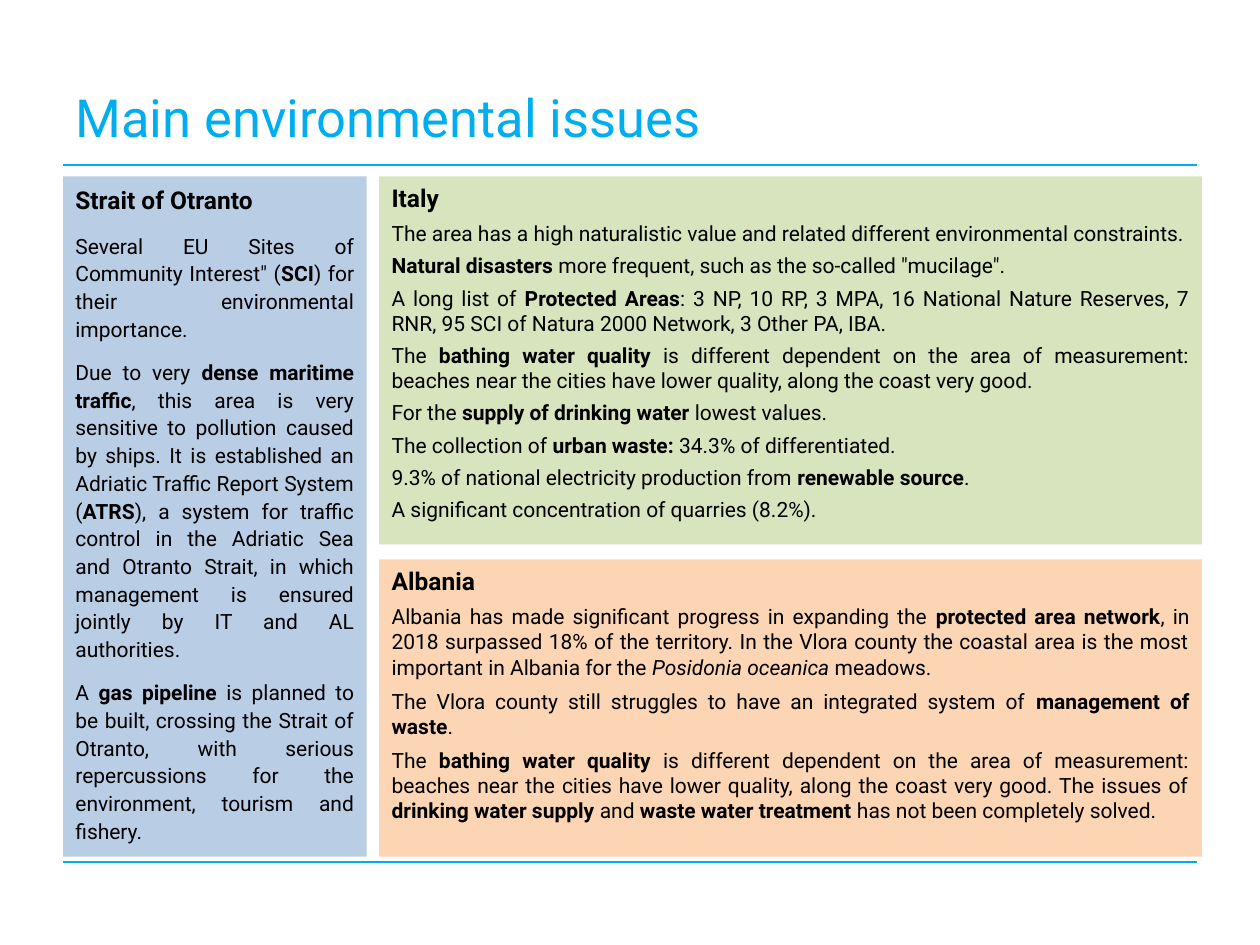
from pptx import Presentation
from pptx.dml.color import RGBColor
from pptx.enum.shapes import MSO_CONNECTOR as Connector, MSO_SHAPE as Shape
from pptx.enum.text import MSO_ANCHOR as Anchor, MSO_AUTO_SIZE as AutoSize, PP_ALIGN as Align
from pptx.util import Emu, Pt

PX = 9144
FONT = "Roboto"
ACCENT = "00AEEF"
INK = "000000"
LEFT, RIGHT = 50, 950
RULE_TOPS = (131, 684)

STRAIT = [
    'Several EU Sites of Community Interest" (**SCI**) for their environmental importance.',
    "Due to very **dense maritime traffic**, this area is very sensitive to pollution caused by "
    "ships. It is established an Adriatic Traffic Report System (**ATRS**), a system for traffic "
    "control in the Adriatic Sea and Otranto Strait, in which management is ensured jointly by "
    "IT and AL authorities.",
    "A **gas pipeline **is planned to be built, crossing the Strait of Otranto, with serious "
    "repercussions for the environment, tourism and fishery.",
]
BATHING = (
    "The **bathing water quality **is different dependent on the area of measurement: beaches "
    "near the cities have lower quality, along the coast very good."
)
ITALY = [
    "The area has a high naturalistic value and related different environmental constraints.",
    '**Natural disasters **more frequent, such as the so-called "mucilage".',
    "A long list of **Protected Areas**: 3 NP, 10 RP, 3 MPA, 16 National Nature Reserves, 7 RNR, "
    "95 SCI of Natura 2000 Network, 3 Other PA, IBA.",
    BATHING,
    "For the **supply of drinking water **lowest values.",
    "The collection of **urban waste: **34.3% of differentiated.",
    "9.3% of national electricity production from **renewable source**.",
    "A significant concentration of quarries (8.2%).",
]
ALBANIA = [
    "Albania has made significant progress in expanding the **protected area network**, in 2018 "
    "surpassed 18% of the territory. In the Vlora county the coastal area is the most important "
    "in Albania for the _Posidonia oceanica _meadows.",
    "The Vlora county still struggles to have an integrated system of **management of waste**.",
    BATHING + " The issues of **drinking water supply** and **waste water treatment **has not "
    "been completely solved.",
]


def px(*lengths):
    """Turn px lengths into EMU."""
    return [Emu(length * PX) for length in lengths]


def color(value):
    """Turn a hex string into a colour."""
    return RGBColor.from_string(value)


def style(font, size, ink):
    """Set the face, size and colour of a font."""
    font.name, font.size = FONT, Pt(size)
    font.color.rgb = color(ink)


def add_spans(para, text, size):
    """Fill a paragraph, with **bold** and _italic_ parts."""
    for bold, part in enumerate(text.split("**")):
        for italic, piece in enumerate(part.split("_")):
            if piece:
                span = para.add_run()
                span.text = piece
                style(span.font, size, INK)
                span.font.bold = bold % 2 == 1
                span.font.italic = italic % 2 == 1


def add_title(page, box, text):
    """Place the slide title in its placeholder."""
    title = page.shapes.title
    title.left, title.top, title.width, title.height = px(*box)
    frame = title.text_frame
    frame.text = text
    frame.auto_size = AutoSize.NONE
    frame.vertical_anchor = Anchor.MIDDLE
    para = frame.paragraphs[0]
    para.alignment = Align.LEFT
    style(para.runs[0].font, 30, ACCENT)


def add_rule(page, top):
    """Draw a horizontal rule across the slide."""
    rule = page.shapes.add_connector(Connector.STRAIGHT, *px(LEFT, top, RIGHT, top))
    rule.line.color.rgb = color(ACCENT)
    rule.line.width = Pt(1)
    properties = rule.element.spPr
    properties.append(properties.makeelement(
        "{http://schemas.openxmlformats.org/drawingml/2006/main}effectLst", {}))


def add_panel(page, box, fill, heading, items, gaps, spacing=1.0):
    """Draw a filled panel with a heading and justified paragraphs."""
    panel = page.shapes.add_shape(Shape.RECTANGLE, *px(*box))
    panel.shadow.inherit = False
    panel.fill.solid()
    panel.fill.fore_color.rgb = color(fill)
    panel.line.fill.background()
    frame = panel.text_frame
    frame.word_wrap = True
    frame.vertical_anchor = Anchor.TOP
    first_gap, later_gap = gaps
    for index, text in enumerate([f"**{heading}**", *items]):
        para = frame.add_paragraph() if index else frame.paragraphs[0]
        para.alignment = Align.JUSTIFY
        para.line_spacing = spacing
        if index:
            para.space_before = Pt(first_gap if index == 1 else later_gap)
        add_spans(para, text, 12 if index else 14)


def main():
    """Build the slide and save it."""
    deck = Presentation()
    deck.slide_width, deck.slide_height = px(1000, 750)
    page = deck.slides.add_slide(deck.slide_layouts[5])
    add_title(page, (LEFT, 30, RIGHT - LEFT, 125), "Main environmental issues")
    for top in RULE_TOPS:
        add_rule(page, top)
    add_panel(page, (LEFT, 140, 241, 540), "B9CDE5", "Strait of Otranto", STRAIT, (9, 9), 1.1)
    add_panel(page, (301, 140, 653, 292), "D7E4BD", "Italy", ITALY, (5, 4))
    add_panel(page, (301, 444, 653, 236), "FCD5B5", "Albania", ALBANIA, (5, 5))
    deck.save("out.pptx")


if __name__ == "__main__":
    main()
